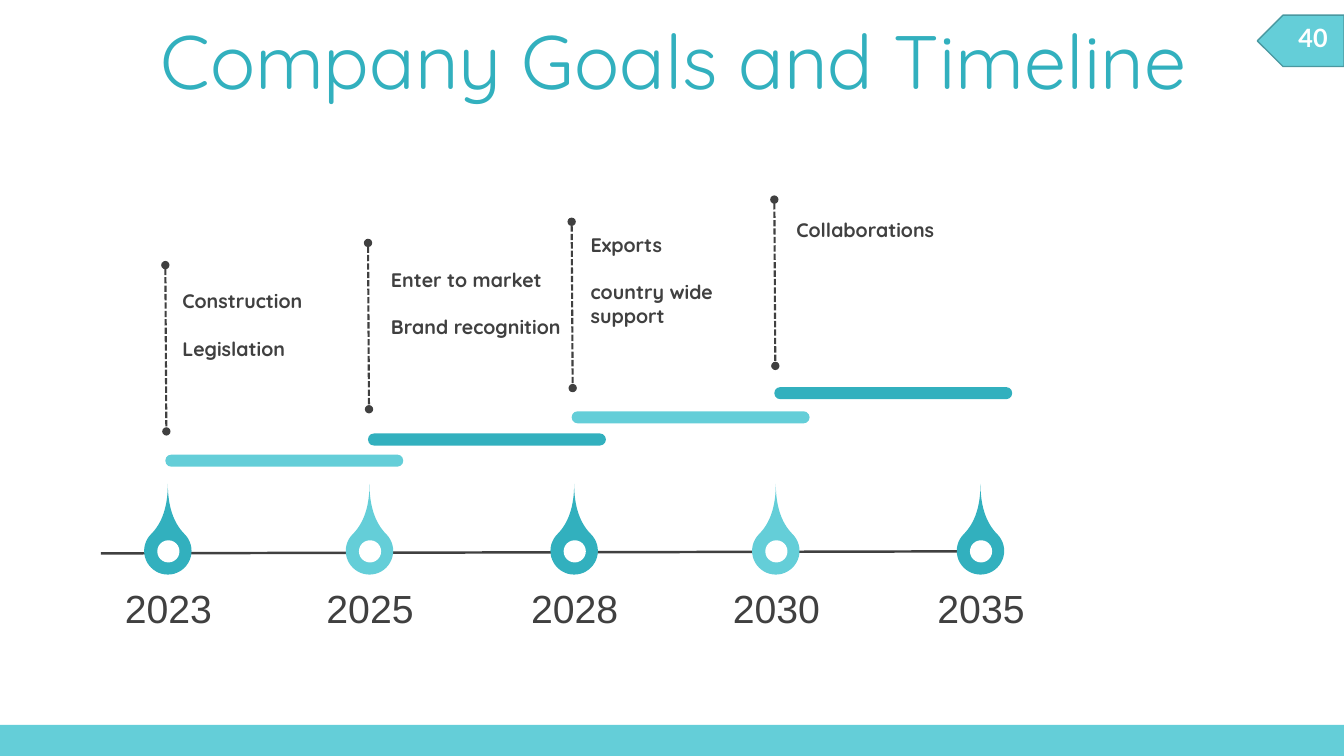
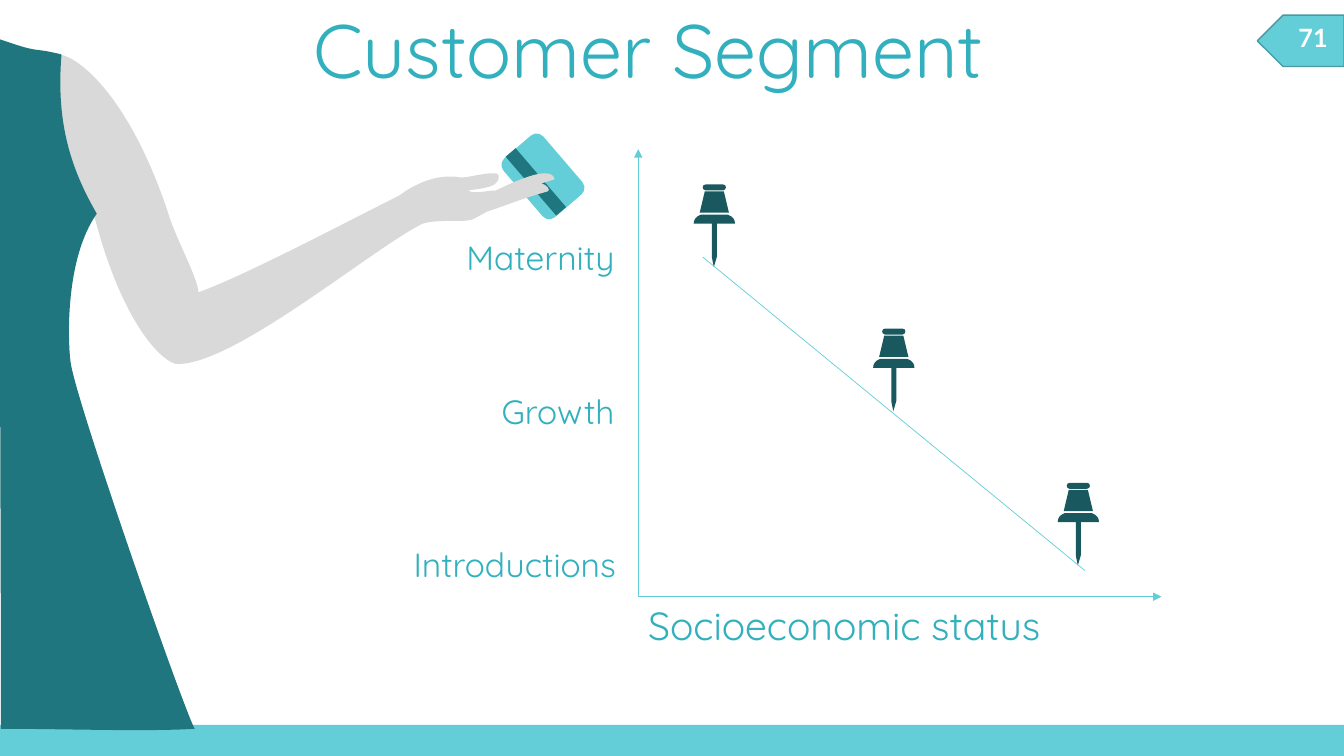
"""Build the company timeline and customer segment slides."""
from dataclasses import dataclass
from typing import Optional

from lxml.etree import SubElement
from pptx import Presentation
from pptx.dml.color import RGBColor
from pptx.enum.dml import MSO_LINE
from pptx.enum.shapes import MSO_CONNECTOR, MSO_SHAPE
from pptx.enum.text import MSO_ANCHOR, PP_ALIGN
from pptx.oxml.ns import qn
from pptx.util import Inches, Pt

AQUA, TEAL, DEEP, PIN_COLOR = "64CED8", "32B0BE", "20767E", "19585F"
TAG_EDGE, INK, SKIN, WHITE = "4A98A0", "404040", "D9D9D9", "FFFFFF"
HEADING_FONT, YEAR_FONT, NUMBER_FONT = "Quicksand", "Arial", "Lato"
TITLE_SIZE, GOAL_SIZE = 54, 14

Box = tuple[float, float, float, float]
Point = tuple[float, float]
Contour = list[tuple[float, ...]]


@dataclass(frozen=True)
class TextStyle:
    size: float
    color: str
    font: str = HEADING_FONT
    bold: bool = False
    align: PP_ALIGN = PP_ALIGN.LEFT
    anchor: MSO_ANCHOR = MSO_ANCHOR.TOP
    inset: bool = True
    line_spacing: Optional[float] = None
    gap: float = 0


@dataclass(frozen=True)
class Milestone:
    year: str
    center: float
    color: str


@dataclass(frozen=True)
class Stage:
    goals: str
    goals_box: Box
    left: float
    bar_top: float
    marker_top: float
    color: str


@dataclass(frozen=True)
class Segment:
    label: str
    label_box: Box
    pin: Point


MILESTONES = [
    Milestone("2023", 1.67, TEAL),
    Milestone("2025", 3.67, AQUA),
    Milestone("2028", 5.7, TEAL),
    Milestone("2030", 7.7, AQUA),
    Milestone("2035", 9.73, TEAL),
]
STAGES = [
    Stage("Construction\nLegislation", (1.71, 2.82, 1.83, 1.01), 1.64, 4.51, 2.63, AQUA),
    Stage("Enter to market\nBrand recognition", (3.78, 2.61, 1.9, 0.81), 3.65, 4.3, 2.41, TEAL),
    Stage("Exports\ncountry wide support", (5.76, 2.26, 1.9, 1.04), 5.67, 4.08, 2.2, AQUA),
    Stage("Collaborations", (7.8, 2.11, 1.9, 0.34), 7.68, 3.84, 1.98, TEAL),
]
SEGMENTS = [
    Segment("Introductions", (3.88, 5.35, 2.45, 0.5), (10.49, 4.79)),
    Segment("Growth", (4.7, 3.83, 1.67, 0.5), (8.66, 3.26)),
    Segment("Maternity", (4.39, 2.3, 1.94, 0.5), (6.88, 1.83)),
]
ARM: Contour = [
    (4.92, 1.72),
    (4.98, 1.74, 4.94, 1.83, 4.86, 1.85),
    (4.8, 1.87, 4.71, 1.88, 4.64, 1.89),
    (4.71, 1.93, 4.82, 1.89, 4.92, 1.89),
    (5.04, 1.83, 5.13, 1.79, 5.25, 1.75),
    (5.37, 1.71, 5.49, 1.7, 5.5, 1.78),
    (5.37, 1.82),
    (5.42, 1.83, 5.47, 1.89, 5.43, 1.9),
    (5.21, 1.96, 5.04, 2.03, 4.83, 2.1),
    (4.79, 2.12, 4.71, 2.17, 4.68, 2.18),
    (4.57, 2.21, 4.35, 2.17, 4.19, 2.22),
    (3.7, 2.46, 2.29, 3.65, 1.74, 3.61),
    (1.53, 3.54, 1.17, 3.07, 0.93, 2.12),
    (0.74, 1.84, 0.37, 1.27, 0.58, 0.54),
    (0.77, 0.55, 1.3, 0.96, 1.69, 2.18),
    (1.8, 2.48, 1.95, 2.74, 1.97, 2.9),
    (2.42, 2.74, 3.52, 2.16, 3.96, 1.94),
    (4.23, 1.74, 4.45, 1.74, 4.56, 1.76),
    (4.63, 1.77, 4.8, 1.71, 4.92, 1.72),
]
DRESS: Contour = [
    (0.61, 0.54),
    (0.56, 1.16, 0.67, 1.62, 0.96, 2.12),
    (0.65, 2.56, 0.67, 3.36, 0.7, 3.59),
    (0.74, 3.94, 1.79, 6.95, 1.93, 7.23),
    (1.46, 7.26, 0.64, 7.23, 0.01, 7.23),
    (0.01, 5.59, -0.01, 2.03, 0, 0.39),
    (0.43, 0.54, 0.28, 0.46, 0.61, 0.54),
]
PIN: list[Contour] = [
    [(0.07, 0.3), (0.34, 0.3), (0.39, 0.32, 0.41, 0.35, 0.41, 0.39), (0.23, 0.39),
     (0.23, 0.72), (0.2, 0.82), (0.18, 0.72), (0.18, 0.39), (0, 0.39),
     (0, 0.35, 0.02, 0.32, 0.07, 0.3)],
    [(0.11, 0.07), (0.3, 0.07), (0.35, 0.28), (0.06, 0.28)],
    [(0.12, 0), (0.29, 0), (0.31, 0, 0.32, 0.01, 0.32, 0.03),
     (0.32, 0.04, 0.31, 0.06, 0.29, 0.06), (0.12, 0.06),
     (0.1, 0.06, 0.09, 0.04, 0.09, 0.03), (0.09, 0.01, 0.1, 0, 0.12, 0)],
]


def rgb(color: str) -> RGBColor:
    """Turn a hex string into a colour."""
    return RGBColor.from_string(color)


def paint(shape, fill: str, edge: Optional[str] = None) -> None:
    """Give a shape a flat fill and an optional thin edge."""
    shape.shadow.inherit = False
    shape.fill.solid()
    shape.fill.fore_color.rgb = rgb(fill)
    if edge:
        shape.line.color.rgb = rgb(edge)
        shape.line.width = Pt(1)
    else:
        shape.line.fill.background()


def add_block(slide, preset: MSO_SHAPE, box: Box, fill: str, edge: Optional[str] = None,
              rotation: float = 0, adjustment: Optional[float] = None) -> None:
    """Draw a filled preset shape."""
    block = slide.shapes.add_shape(preset, *map(Inches, box))
    paint(block, fill, edge)
    block.rotation = rotation
    if adjustment is not None:
        block.adjustments[0] = adjustment


def add_text(slide, text: str, box: Box, style: TextStyle) -> None:
    """Draw a wrapped text box in one style."""
    frame = slide.shapes.add_textbox(*map(Inches, box)).text_frame
    frame.word_wrap = True
    frame.vertical_anchor = style.anchor
    if not style.inset:
        frame.margin_left = frame.margin_right = frame.margin_top = frame.margin_bottom = 0
    frame.text = text
    for index, paragraph in enumerate(frame.paragraphs):
        paragraph.alignment = style.align
        if style.line_spacing:
            paragraph.line_spacing = style.line_spacing
        if index and style.gap:
            paragraph.space_before = Pt(style.gap)
        for run in paragraph.runs:
            run.font.name = style.font
            run.font.size = Pt(style.size)
            run.font.bold = style.bold
            run.font.color.rgb = rgb(style.color)


def add_line(slide, start: Point, end: Point, color: str, width: float,
             head: Optional[str] = None, tail: Optional[str] = None,
             dashed: bool = False) -> None:
    """Draw a straight line with optional ends."""
    line = slide.shapes.add_connector(MSO_CONNECTOR.STRAIGHT, *map(Inches, start + end))
    line.line.color.rgb = rgb(color)
    line.line.width = Pt(width)
    if dashed:
        line.line.dash_style = MSO_LINE.SQUARE_DOT
    properties = line._element.spPr
    outline = properties.find(qn("a:ln"))
    for tag, ending in (("a:headEnd", head), ("a:tailEnd", tail)):
        if ending:
            SubElement(outline, qn(tag), type=ending)
    SubElement(properties, qn("a:effectLst"))


def flatten(contour: Contour, steps: int = 16) -> list[Point]:
    """Sample line and cubic curve segments as points."""
    points: list[Point] = [contour[0]]
    for segment in contour[1:]:
        if len(segment) == 2:
            points.append(segment)
            continue
        x0, y0 = points[-1]
        x1, y1, x2, y2, x3, y3 = segment
        for step in range(1, steps + 1):
            t = step / steps
            a, b, c, d = (1 - t) ** 3, 3 * t * (1 - t) ** 2, 3 * t * t * (1 - t), t ** 3
            points.append((a * x0 + b * x1 + c * x2 + d * x3,
                           a * y0 + b * y1 + c * y2 + d * y3))
    return points


def set_curves(outline, contours: list[Contour], origin: Point) -> None:
    """Replace sampled points with true curve segments."""
    track = next(outline._element.iter(qn("a:path")))
    for child in list(track):
        track.remove(child)
    for contour in contours:
        for index, segment in enumerate(contour):
            tag = "a:cubicBezTo" if len(segment) == 6 else "a:lnTo" if index else "a:moveTo"
            command = SubElement(track, qn(tag))
            for x, y in zip(segment[::2], segment[1::2]):
                SubElement(command, qn("a:pt"),
                           x=str(Inches(origin[0] + x) - outline.left),
                           y=str(Inches(origin[1] + y) - outline.top))
        SubElement(track, qn("a:close"))


def add_outline(slide, contours: list[Contour], fill: str, origin: Point = (0, 0)) -> None:
    """Draw a filled curved freeform from closed contours."""
    builder = None
    for contour in contours:
        first, *rest = [(Inches(origin[0] + x), Inches(origin[1] + y))
                        for x, y in flatten(contour)]
        if builder is None:
            builder = slide.shapes.build_freeform(*first)
        else:
            builder.move_to(*first)
        builder.add_line_segments(rest, close=True)
    outline = builder.convert_to_shape()
    set_curves(outline, contours, origin)
    paint(outline, fill)


def add_framed_slide(deck, number: str):
    """Add a blank slide with the bottom band and page tag."""
    slide = deck.slides.add_slide(deck.slide_layouts[6])
    add_block(slide, MSO_SHAPE.PENTAGON, (12.47, 0.15, 0.86, 0.51), AQUA, TAG_EDGE, 180)
    add_block(slide, MSO_SHAPE.RECTANGLE, (0, 7.19, 13.33, 0.31), AQUA)
    add_text(slide, number, (12.78, 0.1, 0.63, 0.55),
             TextStyle(18, WHITE, NUMBER_FONT, bold=True, anchor=MSO_ANCHOR.MIDDLE))
    return slide


def build_timeline(deck) -> None:
    """Build the goals and timeline slide."""
    slide = add_framed_slide(deck, "40")
    add_text(slide, "Company Goals and Timeline", (0.35, 0.25, 12.66, 0.79),
             TextStyle(TITLE_SIZE, TEAL, align=PP_ALIGN.CENTER, anchor=MSO_ANCHOR.MIDDLE,
                       line_spacing=0.9))
    add_line(slide, (1, 5.49), (9.62, 5.47), INK, 1.75)
    year_style = TextStyle(28, INK, YEAR_FONT, align=PP_ALIGN.CENTER, inset=False)
    for milestone in MILESTONES:
        x = milestone.center
        add_block(slide, MSO_SHAPE.TEAR, (x - 0.24, 5.23, 0.47, 0.47), milestone.color,
                  rotation=315, adjustment=2)
        add_text(slide, milestone.year, (x - 0.6, 5.8, 1.2, 0.47), year_style)
        add_block(slide, MSO_SHAPE.OVAL, (x - 0.11, 5.36, 0.22, 0.22), WHITE)
    goal_style = TextStyle(GOAL_SIZE, INK, bold=True, gap=17)
    for stage in STAGES:
        add_block(slide, MSO_SHAPE.ROUNDED_RECTANGLE, (stage.left, stage.bar_top, 2.36, 0.12),
                  stage.color, adjustment=0.5)
        add_line(slide, (stage.left, stage.marker_top),
                 (stage.left + 0.01, stage.marker_top + 1.65), INK, 1.5, "oval", "oval", True)
        add_text(slide, stage.goals, stage.goals_box, goal_style)


def build_segments(deck) -> None:
    """Build the customer segment slide."""
    slide = add_framed_slide(deck, "71")
    add_block(slide, MSO_SHAPE.ROUNDED_RECTANGLE, (5, 1.49, 0.77, 0.52), AQUA, rotation=49.4)
    add_block(slide, MSO_SHAPE.RECTANGLE, (4.93, 1.74, 0.77, 0.13), DEEP, rotation=49.4)
    add_outline(slide, [ARM], SKIN)
    add_outline(slide, [DRESS], DEEP)
    add_text(slide, "Customer Segment", (3.01, -0.02, 7.32, 1.01), TextStyle(TITLE_SIZE, TEAL))
    axis_origin = (6.33, 5.92)
    for axis_end in ((6.33, 1.48), (11.52, 5.92)):
        add_line(slide, axis_origin, axis_end, AQUA, 0.5, tail="triangle")
    add_text(slide, "Socioeconomic status", (*axis_origin, 4.37, 0.57), TextStyle(28, TEAL))
    label_style = TextStyle(24, TEAL, align=PP_ALIGN.CENTER)
    for segment in SEGMENTS:
        add_text(slide, segment.label, segment.label_box, label_style)
        add_outline(slide, PIN, PIN_COLOR, segment.pin)
    add_line(slide, (6.97, 2.55), (10.76, 5.66), AQUA, 0.5)


def main() -> None:
    """Build and save the deck."""
    deck = Presentation()
    deck.slide_width, deck.slide_height = Inches(13.33), Inches(7.5)
    build_timeline(deck)
    build_segments(deck)
    deck.save("out.pptx")


if __name__ == "__main__":
    main()
